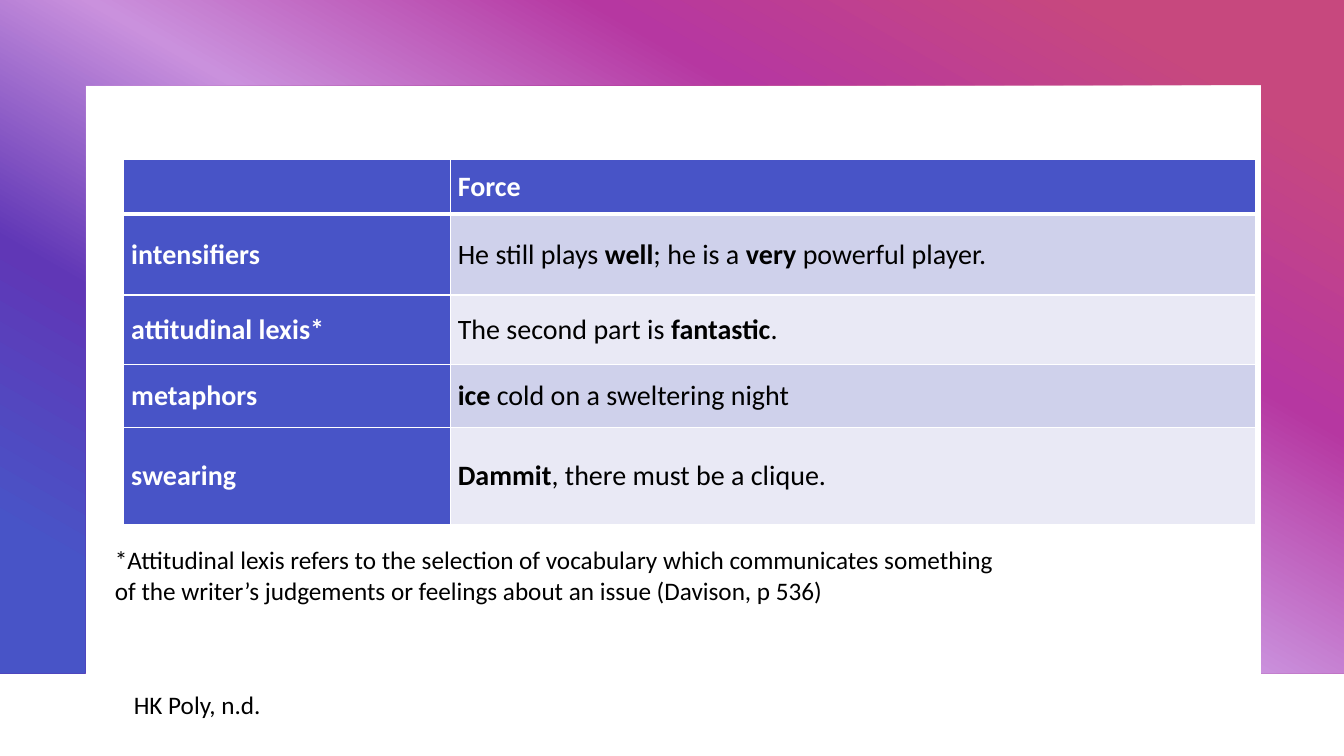
from lxml import etree
from pptx import Presentation
from pptx import util as u
from pptx.dml.color import RGBColor
from pptx.enum import text
from pptx.oxml import ns

PX = 9525
WHITE = RGBColor(0xFF, 0xFF, 0xFF)
BLACK = RGBColor(0x00, 0x00, 0x00)
BLUE = RGBColor(0x48, 0x54, 0xC7)
BAND_DARK = RGBColor(0xCF, 0xD1, 0xEB)
BAND_LIGHT = RGBColor(0xE9, 0xE9, 0xF5)
FRAME_STOPS = [
    (10, RGBColor(0xC7, 0x48, 0x7E)),
    (30, RGBColor(0xB6, 0x37, 0xA1)),
    (50, RGBColor(0xCA, 0x91, 0xDD)),
    (70, RGBColor(0x60, 0x37, 0xB6)),
    (90, BLUE),
]
FRAME_POINTS = [(0, 0), (1280, 0), (1280, 641), (1201, 641),
                (1201, 81), (81, 81), (81, 641), (0, 641)]
COLUMN_WIDTHS = [311, 767]
ROW_HEIGHTS = [52, 77, 66, 60, 93]
ROWS = [
    ("", "*Force*"),
    ("intensifiers", "He still plays *well*; he is a *very *powerful player."),
    ("attitudinal lexis*", "The second part is *fantastic*."),
    ("metaphors", "*ice* cold on a sweltering night"),
    ("swearing", "*Dammit*, there must be a clique."),
]
NOTE = [
    "*Attitudinal lexis refers to the selection of vocabulary which communicates something",
    "of the writer’s judgements or feelings about an issue (Davison, p 536)",
]


def px(n):
    return u.Emu(n * PX)


class SlideBuilder:
    font = "Calibri"
    body_size = 18
    table_size = 20

    def __init__(self, prs):
        self.slide = prs.slides.add_slide(prs.slide_layouts[6])

    def style(self, r, size, color, bold=False):
        r.font.name = self.font
        r.font.size = u.Pt(size)
        r.font.bold = bold
        r.font.color.rgb = color

    def frame(self, points, stops, angle):
        fb = self.slide.shapes.build_freeform(*points[0], scale=PX)
        fb.add_line_segments(points[1:], close=True)
        sp = fb.convert_to_shape()
        sp.shadow.inherit = False
        sp.line.fill.background()
        sp.fill.gradient()
        sp.fill.gradient_angle = angle
        gs_list = next(sp._element.iter(ns.qn("a:gsLst")))
        gs_list.clear()
        for percent, color in stops:
            gs = etree.SubElement(gs_list, ns.qn("a:gs"), pos=str(percent * 1000))
            etree.SubElement(gs, ns.qn("a:srgbClr"), val=str(color))

    def text_box(self, left, top, width, height, lines, wrap=True):
        sp = self.slide.shapes.add_textbox(px(left), px(top), px(width), px(height))
        tf = sp.text_frame
        tf.word_wrap = wrap
        tf.text = "\n".join(lines)
        for p in tf.paragraphs:
            for r in p.runs:
                self.style(r, self.body_size, BLACK)

    def borders(self, cell, top, bottom):
        tc_pr = cell._tc.get_or_add_tcPr()
        for side, points in (("L", 1), ("R", 1), ("T", top), ("B", bottom)):
            ln = etree.SubElement(tc_pr, ns.qn(f"a:ln{side}"), w=str(u.Pt(points)))
            fill = etree.SubElement(ln, ns.qn("a:solidFill"))
            etree.SubElement(fill, ns.qn("a:srgbClr"), val=str(WHITE))

    def cell(self, cell, parts, fill, color, top=1, bottom=1):
        cell.margin_left = cell.margin_right = px(7)
        cell.margin_top = cell.margin_bottom = 0
        cell.vertical_anchor = text.MSO_ANCHOR.MIDDLE
        self.borders(cell, top, bottom)
        cell.fill.solid()
        cell.fill.fore_color.rgb = fill
        p = cell.text_frame.paragraphs[0]
        for content, bold in parts:
            if content:
                r = p.add_run()
                r.text = content
                self.style(r, self.table_size, color, bold)

    def table(self, left, top, widths, heights, rows):
        table = self.slide.shapes.add_table(
            len(rows), len(widths), px(left), px(top),
            px(sum(widths)), px(sum(heights))).table
        for column, width in zip(table.columns, widths):
            column.width = px(width)
        for i, (label, example) in enumerate(rows):
            table.rows[i].height = px(heights[i])
            edges = {"top": 3 if i == 1 else 1, "bottom": 3 if i == 0 else 1}
            fill = BLUE if i == 0 else BAND_DARK if i % 2 else BAND_LIGHT
            color = WHITE if i == 0 else BLACK
            parts = [(s, n % 2 == 1) for n, s in enumerate(example.split("*"))]
            self.cell(table.cell(i, 0), [(label, True)], BLUE, WHITE, **edges)
            self.cell(table.cell(i, 1), parts, fill, color, **edges)


def main():
    prs = Presentation()
    prs.slide_width, prs.slide_height = px(1280), px(720)
    s = SlideBuilder(prs)
    s.frame(FRAME_POINTS, FRAME_STOPS, 240)
    s.table(118, 152, COLUMN_WIDTHS, ROW_HEIGHTS, ROWS)
    s.text_box(118, 652, 214, 38, ["HK Poly, n.d."])
    s.text_box(100, 514, 969, 68, NOTE, wrap=False)
    prs.save("out.pptx")


if __name__ == "__main__":
    main()
